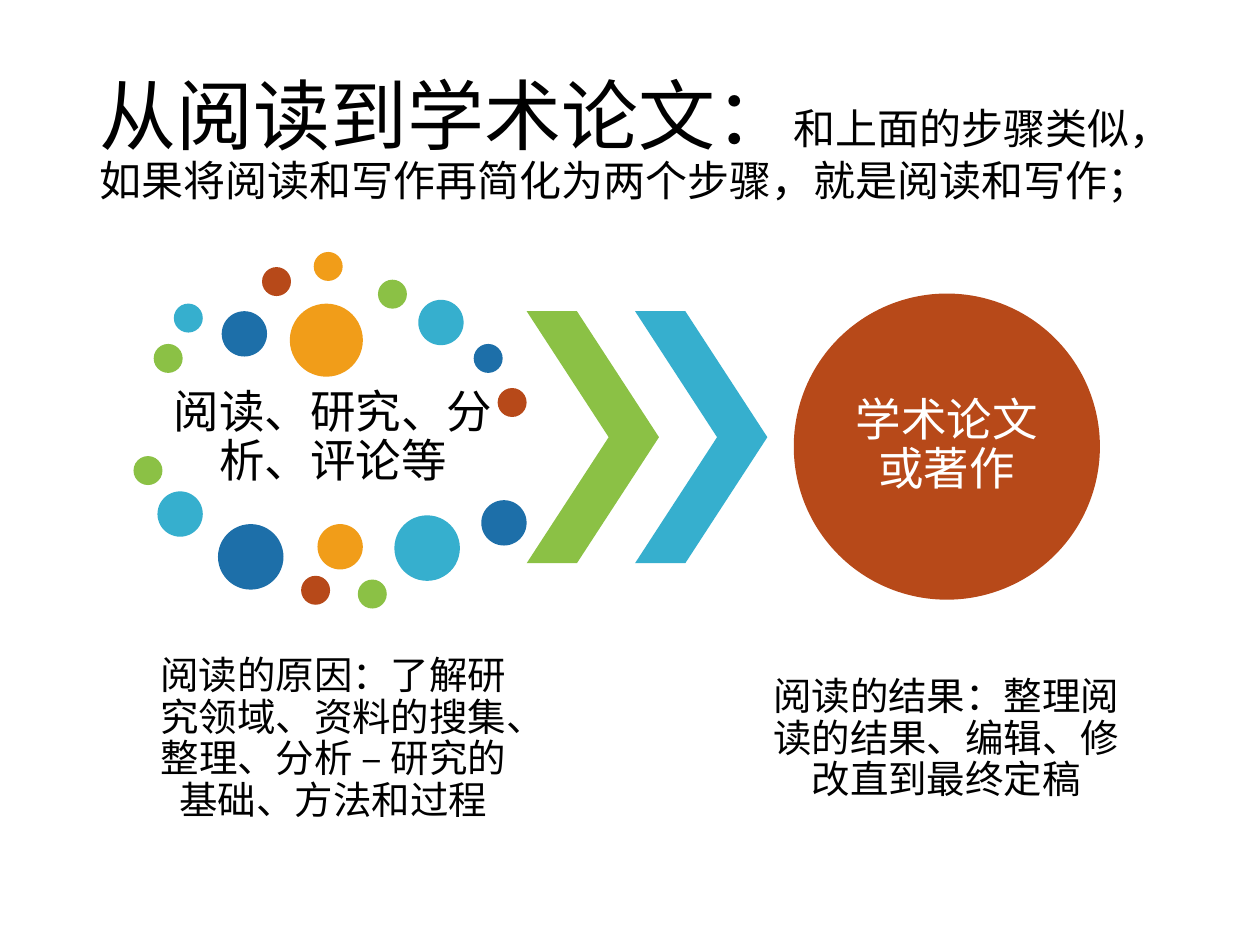
import dataclasses

import pptx
import pptx.dml.color
import pptx.enum.shapes
import pptx.enum.text
import pptx.util

Inches = pptx.util.Inches
Pt = pptx.util.Pt
Shape = pptx.enum.shapes.MSO_SHAPE
Align = pptx.enum.text.PP_ALIGN
Anchor = pptx.enum.text.MSO_ANCHOR


def rgb(code):
    return pptx.dml.color.RGBColor.from_string(code)


@dataclasses.dataclass(frozen=True)
class Theme:
    font: str = "Times New Roman"
    ink = rgb("000000")
    paper = rgb("FFFFFF")
    green = rgb("8BC145")
    cyan = rgb("36AFCE")
    blue = rgb("1D6FA9")
    rust = rgb("B74919")
    orange = rgb("F19D19")
    title_size: int = 44
    subtitle_size: int = 24
    label_size: int = 26
    caption_size: int = 22
    line_spacing: float = 0.9


THEME = Theme()

# Dot diameters
SMALL, MEDIUM, LARGE, HUGE = 0.23, 0.36, 0.52, 0.58
# Colours repeat in this order around the cloud
DOT_COLOURS = (THEME.green, THEME.cyan, THEME.blue, THEME.rust, THEME.orange)
# Left, top and diameter of each dot inside the cloud
DOTS = (
    (0.16, 0.73, SMALL), (0.32, 0.41, SMALL), (0.70, 0.47, MEDIUM),
    (1.02, 0.12, SMALL), (1.43, 0.00, SMALL), (1.94, 0.22, SMALL),
    (2.26, 0.38, MEDIUM), (2.70, 0.73, SMALL), (2.89, 1.08, SMALL),
    (1.24, 0.41, HUGE), (0.00, 1.62, SMALL), (0.19, 1.90, MEDIUM),
    (0.67, 2.16, LARGE), (1.33, 2.57, SMALL), (1.46, 2.16, MEDIUM),
    (1.78, 2.60, SMALL), (2.07, 2.09, LARGE), (2.76, 1.97, MEDIUM),
)


def add_solid(page, kind, left, top, width, height, colour):
    shape = page.shapes.add_shape(
        kind, Inches(left), Inches(top), Inches(width), Inches(height))
    shape.shadow.inherit = False
    shape.fill.solid()
    shape.fill.fore_color.rgb = colour
    shape.line.fill.background()
    return shape


def write_centred(shape, text, size, colour, inset):
    frame = shape.text_frame
    frame.word_wrap = True
    frame.vertical_anchor = Anchor.MIDDLE
    frame.margin_left = frame.margin_right = Inches(inset)
    frame.margin_top = frame.margin_bottom = Inches(inset)
    para = frame.paragraphs[0]
    para.text = text
    para.alignment = Align.CENTER
    para.line_spacing = THEME.line_spacing
    para.font.name = THEME.font
    para.font.size = Pt(size)
    para.font.color.rgb = colour


def add_text(page, box, text, size, inset):
    shape = page.shapes.add_textbox(*(Inches(value) for value in box))
    write_centred(shape, text, size, THEME.ink, inset)


def place_title(page, box, heading, remark):
    title = page.shapes.title
    title.left, title.top, title.width, title.height = (
        Inches(value) for value in box)
    frame = title.text_frame
    frame.auto_size = pptx.enum.text.MSO_AUTO_SIZE.NONE
    frame.word_wrap = True
    frame.vertical_anchor = Anchor.MIDDLE
    para = frame.paragraphs[0]
    para.alignment = Align.LEFT
    para.line_spacing = THEME.line_spacing
    for text, size in ((heading, THEME.title_size),
                       (remark, THEME.subtitle_size)):
        span = para.add_run()
        span.text = text
        span.font.name = THEME.font
        span.font.size = Pt(size)
        span.font.color.rgb = THEME.ink


def add_dot_cloud(page, box, label):
    left, top, width, height = box
    add_text(page, (left + 0.16, top + 1.01, 2.85, 0.94),
             label, THEME.label_size, 0.04)
    for index, (dot_left, dot_top, size) in enumerate(DOTS):
        # The huge dot closes the first round with its own colour
        colour = DOT_COLOURS[index % len(DOT_COLOURS)]
        if index >= 9:
            colour = DOT_COLOURS[(index - 10) % len(DOT_COLOURS)]
        add_solid(page, Shape.OVAL, left + dot_left, top + dot_top,
                  size, size, colour)


def add_chevrons(page, box):
    left, top, width, height = box
    arrow_width = 1.05
    colours = (THEME.green, THEME.cyan)
    step = (width - arrow_width) / (len(colours) - 1)
    for index, colour in enumerate(colours):
        arrow = add_solid(page, Shape.CHEVRON, left + index * step, top,
                          arrow_width, height, colour)
        arrow.adjustments[0] = 0.62


def add_result_circle(page, box, label):
    circle = add_solid(page, Shape.OVAL, *box, THEME.rust)
    write_centred(circle, label, THEME.label_size, THEME.paper, 0)


def add_caption(page, box, text):
    add_text(page, box, text, THEME.caption_size, 0.03)


def main():
    deck = pptx.Presentation()
    deck.slide_width, deck.slide_height = Inches(10), Inches(7.5)
    page = deck.slides.add_slide(deck.slide_layouts[5])

    place_title(page, (0.69, 0.4, 8.62, 1.45), "从阅读到学术论文：",
                "和上面的步骤类似，如果将阅读和写作再简化为两个步骤，就是阅读和写作；")

    # From reading to the finished paper
    add_dot_cloud(page, (1.06, 2, 3.12, 2.83), "阅读、研究、分析、评论等")
    add_chevrons(page, (4.18, 2.47, 1.91, 2))
    add_result_circle(page, (6.3, 2.33, 2.43, 2.43), "学术论文或著作")

    # Explanations below each stage
    add_caption(page, (1.22, 4.99, 2.85, 1.76),
                "阅读的原因：了解研究领域、资料的搜集、整理、分析 – 研究的基础、方法和过程")
    add_caption(page, (6.08, 4.99, 2.86, 1.76),
                "阅读的结果：整理阅读的结果、编辑、修改直到最终定稿")

    deck.save("out.pptx")


if __name__ == "__main__":
    main()
